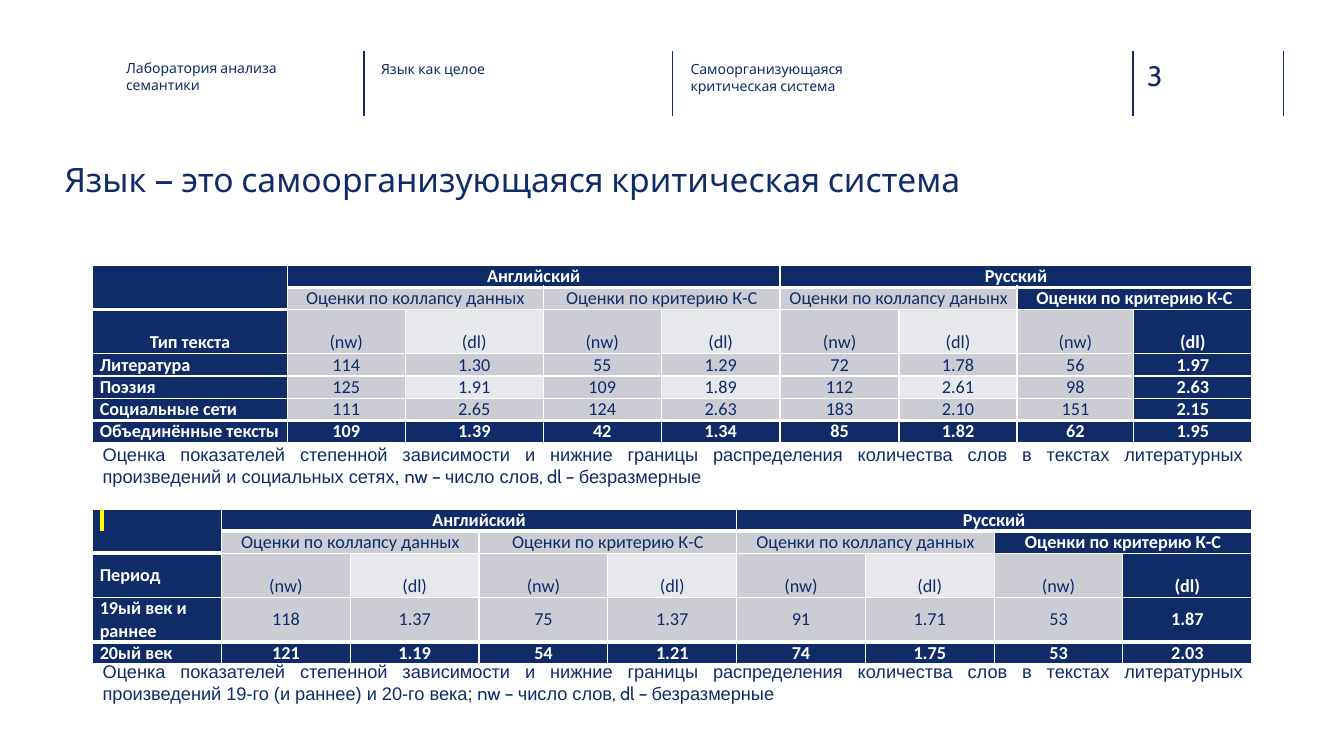
import lxml.etree
import pptx
import pptx.dml.color
import pptx.enum.shapes
import pptx.enum.text
import pptx.oxml.ns
import pptx.util

ALIGN = pptx.enum.text.PP_ALIGN
ANCHOR = pptx.enum.text.MSO_ANCHOR
NAVY, GRAY, PALE, WHITE, YELLOW = "0F2C68", "CCCDD4", "E7E8EB", "FFFFFF", "FFFF00"


def color(value):
    return pptx.dml.color.RGBColor.from_string(value)


def add_element(parent, tag, **attributes):
    return lxml.etree.SubElement(parent, pptx.oxml.ns.qn(tag), **attributes)


class SlideBuilder:
    heading_font = "Cabin"
    table_font = "Calibri"
    note_font = "Arial"
    table_size = 13
    row_height = 2.93

    def __init__(self, presentation):
        self.width = presentation.slide_width
        self.height = presentation.slide_height
        self.slide = presentation.slides.add_slide(presentation.slide_layouts[5])

    def x(self, percent):
        return round(self.width * percent / 100)

    def y(self, percent):
        return round(self.height * percent / 100)

    def box(self, left, top, width, height):
        return self.x(left), self.y(top), self.x(width), self.y(height)

    def style(self, paragraph, size, font, ink=NAVY, bold=False, align=ALIGN.LEFT):
        paragraph.alignment = align
        paragraph.font.size = pptx.util.Pt(size)
        paragraph.font.name = font
        paragraph.font.bold = bold
        paragraph.font.color.rgb = color(ink)

    def fill_frame(self, shape, text, size):
        frame = shape.text_frame
        frame.word_wrap = True
        frame.auto_size = pptx.enum.text.MSO_AUTO_SIZE.NONE
        frame.vertical_anchor = ANCHOR.TOP
        frame.margin_left = frame.margin_right = frame.margin_top = frame.margin_bottom = 0
        frame.text = text
        self.style(frame.paragraphs[0], size, self.heading_font)

    def title(self, text, *place):
        shape = self.slide.shapes.title
        shape.left, shape.top, shape.width, shape.height = self.box(*place)
        self.fill_frame(shape, text, 24)

    def label(self, text, size, *place):
        self.fill_frame(self.slide.shapes.add_textbox(*self.box(*place)), text, size)

    def divider(self, left, top, bottom):
        line = self.slide.shapes.add_connector(
            pptx.enum.shapes.MSO_CONNECTOR.STRAIGHT,
            self.x(left), self.y(top), self.x(left), self.y(bottom))
        line.line.color.rgb = color(NAVY)
        line.line.width = pptx.util.Pt(1)
        add_element(line._element.spPr, "a:effectLst")

    def note(self, segments, *place):
        frame = self.slide.shapes.add_textbox(*self.box(*place)).text_frame
        frame.word_wrap = True
        paragraph = frame.paragraphs[0]
        self.style(paragraph, self.table_size, self.note_font, align=ALIGN.JUSTIFY)
        for text, font in segments:
            run = paragraph.add_run()
            run.text = text
            run.font.name = font

    def borders(self, cell, row, column, last):
        thick = {1, last, 2} if column == 0 else {1, last}
        widths = {"L": 1, "R": 1, "T": 3 if row in thick else 1, "B": 3 if row + 1 in thick else 1}
        properties = cell._tc.get_or_add_tcPr()
        for side, points in widths.items():
            line = add_element(properties, f"a:ln{side}", w=str(pptx.util.Pt(points)))
            add_element(add_element(line, "a:solidFill"), "a:srgbClr", val=WHITE)

    def cell_fill(self, row, column, last):
        if row in (0, last) or column == 0 or column == 8 or (row == 1 and column == 7):
            return NAVY
        return PALE if row % 2 == 0 and column % 2 == 0 else GRAY

    def cell(self, cell, text, row, column, last):
        self.borders(cell, row, column, last)
        background = self.cell_fill(row, column, last)
        cell.fill.solid()
        cell.fill.fore_color.rgb = color(background)
        cell.margin_left = cell.margin_right = pptx.util.Inches(0.07)
        cell.margin_top = cell.margin_bottom = 0
        cell.vertical_anchor = ANCHOR.TOP if row < 2 else ANCHOR.BOTTOM if row == 2 else ANCHOR.MIDDLE
        cell.text = text
        paragraph = cell.text_frame.paragraphs[0]
        dark = background == NAVY
        self.style(paragraph, self.table_size, self.table_font, WHITE if dark else NAVY, dark,
                   ALIGN.CENTER if column else ALIGN.LEFT)
        paragraph._p.get_or_add_endParaRPr().set("sz", str(self.table_size * 100))

    def table(self, rows, units, weights, left, top, width):
        last = len(rows) - 1
        height = sum(units) * self.row_height
        table = self.slide.shapes.add_table(
            len(rows), len(weights), *self.box(left, top, width, height)).table
        table.first_row = table.horz_banding = False
        for column, weight in zip(table.columns, weights):
            column.width = self.x(width * weight / sum(weights))
        for index, (texts, unit) in enumerate(zip(rows, units)):
            table.rows[index].height = self.y(unit * self.row_height)
            for column, text in enumerate(texts):
                self.cell(table.cell(index, column), text, index, column, last)
        table.cell(0, 0).merge(table.cell(1, 0))
        for row, span in ((0, 4), (1, 2)):
            for column in range(1, 9, span):
                table.cell(row, column).merge(table.cell(row, column + span - 1))
        return table

    def highlight(self, cell, value):
        run = cell.text_frame.paragraphs[0].runs[0]
        mark = add_element(run._r.get_or_add_rPr(), "a:highlight")
        add_element(mark, "a:srgbClr", val=value)


def table_rows(corner, label, russian_collapse, *records):
    collapse, criterion = "Оценки по коллапсу данных", "Оценки по критерию К-С"
    return [
        [corner, "Английский", "", "", "", "Русский", "", "", ""],
        ["", collapse, "", criterion, "", russian_collapse, "", criterion, ""],
        [label] + ["(nw)", "(dl)"] * 4,
        *([name] + values.split() for name, values in records),
    ]


def note_segments(ending):
    opening = ("Оценка показателей степенной зависимости и нижние границы распределения "
               "количества слов в текстах литературных произведений ")
    return [(opening + ending, "Arial"), ("nw – ", "Cabin"), ("число слов", "Arial"),
            (", dl – ", "Cabin"), ("безразмерные", "Arial")]


def main():
    presentation = pptx.Presentation()
    presentation.slide_width = pptx.util.Inches(13.33)
    presentation.slide_height = pptx.util.Inches(7.5)
    builder = SlideBuilder(presentation)

    for left in (27.08, 50.02, 84.3, 95.48):
        builder.divider(left, 6.8, 15.33)
    builder.label("3", 20, 85.35, 7.73, 5.48, 4.53)
    builder.title("Язык — это самоорганизующаяся критическая система", 4.8, 21.07, 80.33, 11.33)
    builder.label("Лаборатория анализа семантики", 10, 9.38, 7.87, 15.6, 6)
    builder.label("Язык как целое", 10, 28.35, 8, 16.95, 6)
    builder.label("Самоорганизующаяся критическая система", 10, 51.38, 8, 16.95, 6)

    left, width = 6.9, 86.25
    text_types = table_rows(
        "", "Тип текста", "Оценки по коллапсу данынх",
        ("Литература", "114 1.30 55 1.29 72 1.78 56 1.97"),
        ("Поэзия", "125 1.91 109 1.89 112 2.61 98 2.63"),
        ("Социальные сети", "111 2.65 124 2.63 183 2.10 151 2.15"),
        ("Объединённые тексты", "109 1.39 42 1.34 85 1.82 62 1.95"))
    weights = [1.93, 1.17, 1.37, 1.17, 1.18, 1.18, 1.17, 1.16, 1.17]
    table = builder.table(text_types, [1, 1, 2, 1, 1, 1, 1], weights, left, 35.07, width)
    table.cell(2, 0).text_frame.paragraphs[0].alignment = ALIGN.CENTER
    builder.note(note_segments("и социальных сетях, "), left, 58, width, 7.2)

    periods = table_rows(
        " ", "Период", "Оценки по коллапсу данных",
        ("19ый век и раннее", "118 1.37 75 1.37 91 1.71 53 1.87"),
        ("20ый век", "121 1.19 54 1.21 74 1.75 53 2.03"))
    table = builder.table(periods, [1, 1, 2, 2, 1], [1] * 9, left, 67.33, width)
    table.cell(2, 0).vertical_anchor = ANCHOR.MIDDLE
    builder.highlight(table.cell(0, 0), YELLOW)
    builder.note(note_segments("19-го (и раннее) и 20-го века; "), left, 86.67, width, 7.2)

    presentation.save("out.pptx")


if __name__ == "__main__":
    main()
